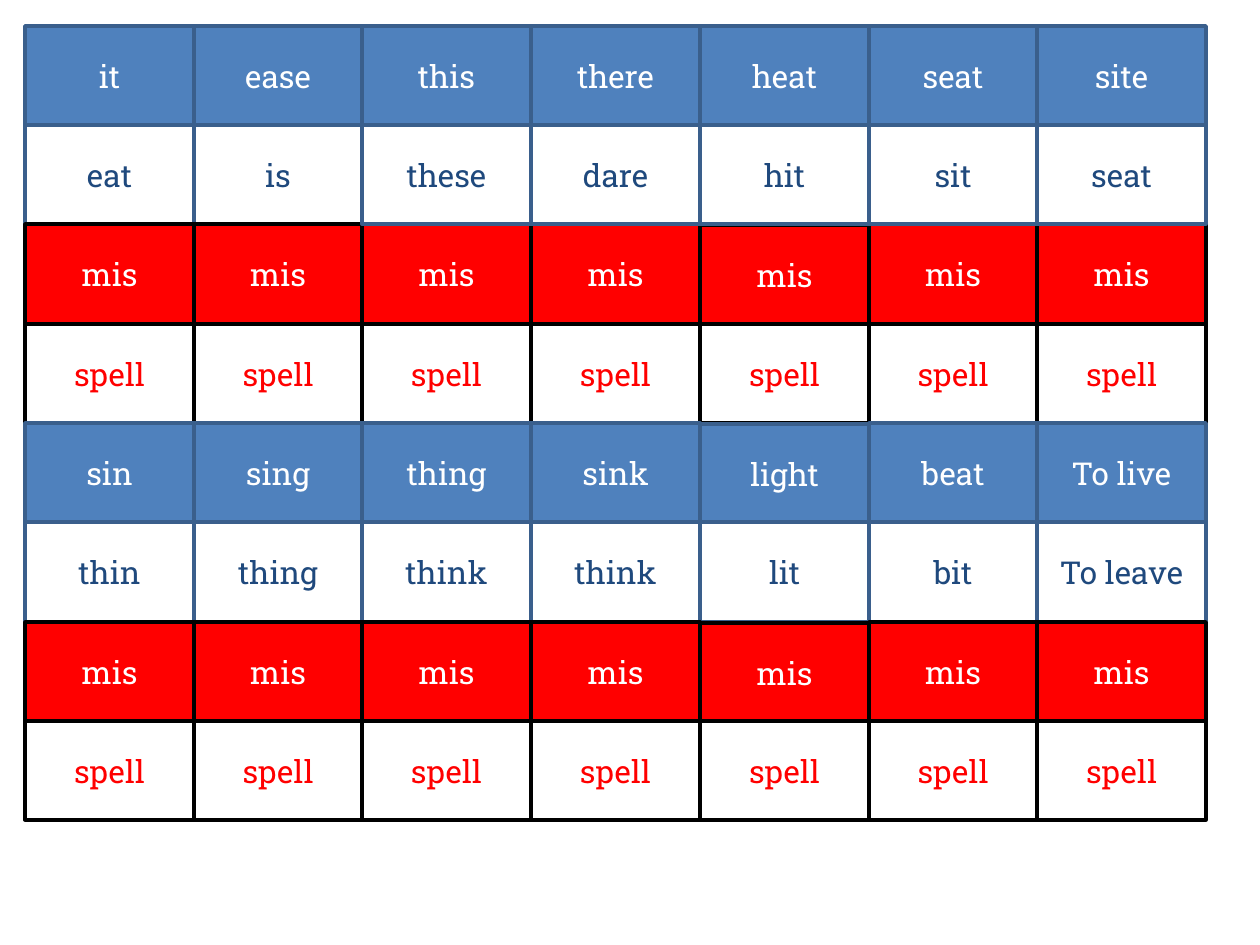
"""Build a seven-column grid of word pairs alternating with mis/spell pairs."""
import dataclasses
import typing

import pptx
import pptx.dml.color
import pptx.enum.shapes
import pptx.enum.text
import pptx.slide
import pptx.util

PX = 914400 / 126


class Style(typing.NamedTuple):
    fill: str
    line: str
    text: str


@dataclasses.dataclass(frozen=True)
class Theme:
    font: str = "Roboto Slab"
    size: int = 18
    line_width: int = 2
    word_top: Style = Style("4F81BD", "3A5F8C", "FFFFFF")
    word_bottom: Style = Style("FFFFFF", "3A5F8C", "1F497D")
    miss_top: Style = Style("FF0000", "000000", "FFFFFF")
    miss_bottom: Style = Style("FFFFFF", "000000", "FF0000")


@dataclasses.dataclass(frozen=True)
class Grid:
    left: int = 25
    top: int = 26
    width: int = 1181
    height: int = 794
    cols: int = 7
    rows: int = 8

    def x(self, col: int) -> int:
        return self.left + round(self.width * col / self.cols)

    def y(self, row: int) -> int:
        return self.top + round(self.height * row / self.rows)


class Block(typing.NamedTuple):
    row: int
    cols: range


class Cell(typing.NamedTuple):
    text: str
    style: Style
    x: int
    y: int
    w: int
    h: int


THEME = Theme()
GRID = Grid()
STYLES = (THEME.word_top, THEME.word_bottom, THEME.miss_top, THEME.miss_bottom)
MISS = [["mis"] * GRID.cols, ["spell"] * GRID.cols]
WORDS = [
    ["it", "ease", "this", "there", "heat", "seat", "site"],
    ["eat", "is", "these", "dare", "hit", "sit", "seat"],
    *MISS,
    ["sin", "sing", "thing", "sink", "light", "beat", "To live"],
    ["thin", "thing", "think", "think", "lit", "bit", "To leave"],
    *MISS,
]
BLOCKS = (
    Block(0, range(2)),
    Block(2, range(GRID.cols)),
    Block(0, range(2, GRID.cols)),
    Block(4, range(GRID.cols)),
    Block(6, range(GRID.cols)),
)
LOWERED_COL = 4
LOWERED_ROWS = (2, 4, 6)


def px(n: int) -> int:
    return pptx.util.Emu(round(n * PX))


def rgb(value: str) -> pptx.dml.color.RGBColor:
    return pptx.dml.color.RGBColor.from_string(value)


def make_cell(row: int, col: int) -> Cell:
    x, y = GRID.x(col), GRID.y(row)
    drop = int(col == LOWERED_COL and row in LOWERED_ROWS)
    return Cell(WORDS[row][col], STYLES[row % len(STYLES)], x, y + drop,
                GRID.x(col + 1) - x, GRID.y(row + 1) - y)


def draw_cell(s: pptx.slide.Slide, cell: Cell) -> None:
    sp = s.shapes.add_shape(pptx.enum.shapes.MSO_SHAPE.RECTANGLE,
                            px(cell.x), px(cell.y), px(cell.w), px(cell.h))
    sp.shadow.inherit = False
    sp.fill.solid()
    sp.fill.fore_color.rgb = rgb(cell.style.fill)
    sp.line.color.rgb = rgb(cell.style.line)
    sp.line.width = pptx.util.Pt(THEME.line_width)
    tf = sp.text_frame
    tf.word_wrap = True
    tf.vertical_anchor = pptx.enum.text.MSO_ANCHOR.MIDDLE
    p = tf.paragraphs[0]
    p.alignment = pptx.enum.text.PP_ALIGN.CENTER
    r = p.add_run()
    r.text = cell.text
    r.font.name = THEME.font
    r.font.size = pptx.util.Pt(THEME.size)
    r.font.color.rgb = rgb(cell.style.text)


def draw_block(s: pptx.slide.Slide, block: Block) -> None:
    for col in block.cols:
        for row in (block.row, block.row + 1):
            draw_cell(s, make_cell(row, col))


def main() -> None:
    prs = pptx.Presentation()
    prs.slide_width, prs.slide_height = px(1260), px(945)
    s = prs.slides.add_slide(prs.slide_layouts[6])
    for block in BLOCKS:
        draw_block(s, block)
    prs.save("out.pptx")


if __name__ == "__main__":
    main()
